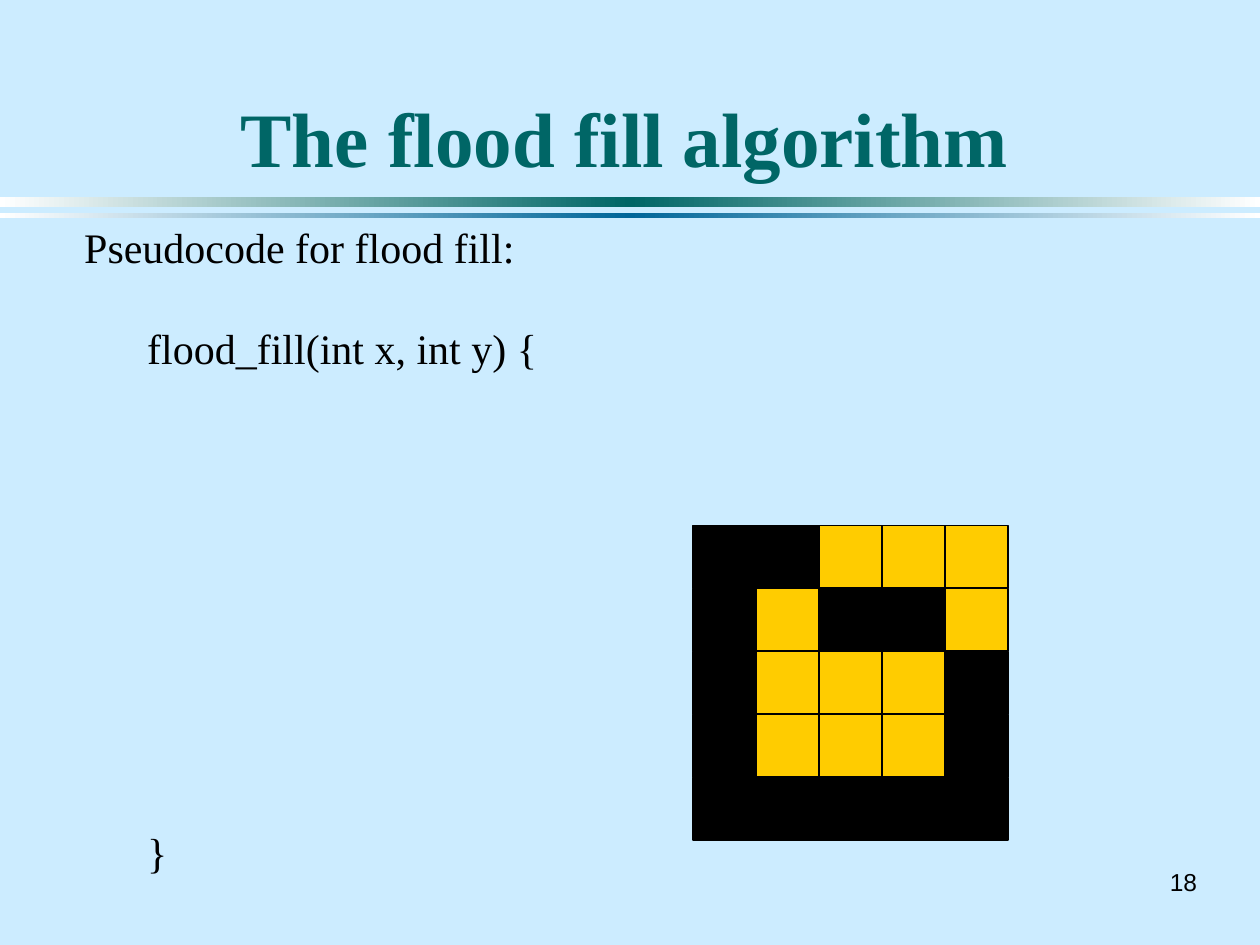
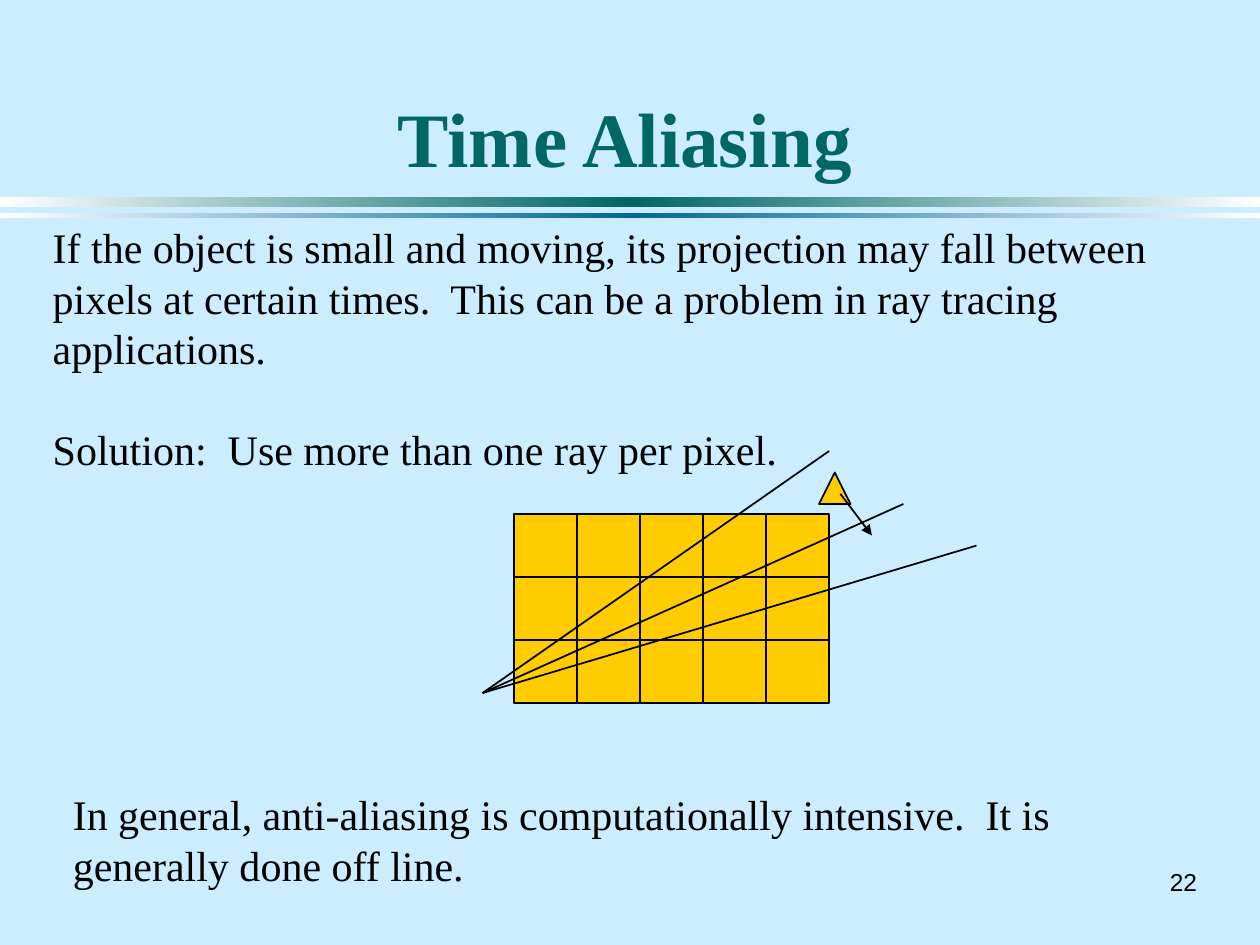
"""Build two lecture slides on flood fill and time aliasing."""
from copy import deepcopy
from dataclasses import dataclass

from lxml import etree
from pptx import Presentation
from pptx.dml.color import RGBColor
from pptx.enum.shapes import MSO_CONNECTOR, MSO_SHAPE
from pptx.enum.text import MSO_ANCHOR, PP_ALIGN
from pptx.oxml.ns import qn
from pptx.util import Inches, Pt

RECTANGLE = MSO_SHAPE.RECTANGLE
TRIANGLE = MSO_SHAPE.ISOSCELES_TRIANGLE
STRAIGHT = MSO_CONNECTOR.STRAIGHT
LEFT, CENTER, RIGHT = PP_ALIGN.LEFT, PP_ALIGN.CENTER, PP_ALIGN.RIGHT
TOP, MIDDLE, BOTTOM = MSO_ANCHOR.TOP, MSO_ANCHOR.MIDDLE, MSO_ANCHOR.BOTTOM


@dataclass(frozen=True)
class Theme:
    """Colours, fonts and type sizes shared by the slides."""
    sky: str = "CCECFF"
    teal: str = "006666"
    blue: str = "006699"
    white: str = "FFFFFF"
    black: str = "000000"
    gold: str = "FFCC00"
    serif: str = "Times New Roman"
    sans: str = "Arial"
    title_size: int = 44
    body_size: int = 24
    number_size: int = 14
    body_line: float = 28.8
    stroke: int = 1


THEME = Theme()
CELL = 0.5


def rgb(color):
    """Turn a hex string into a colour."""
    return RGBColor.from_string(color)


def inches(*lengths):
    """Turn plain numbers into lengths."""
    return [Inches(length) for length in lengths]


def add_text(page, box, paragraphs, *, font=THEME.serif, size=THEME.body_size,
             color=THEME.black, bold=False, align=LEFT, anchor=TOP,
             wrap=True, line=None):
    """Write paragraphs given as (text, indent in inches, blank lines above)."""
    frame = page.shapes.add_textbox(*inches(*box)).text_frame
    frame.word_wrap = wrap
    frame.vertical_anchor = anchor
    for index, (text, indent, lines_above) in enumerate(paragraphs):
        para = frame.add_paragraph() if index else frame.paragraphs[0]
        para.alignment = align
        if line:
            para.line_spacing = Pt(line)
            para.space_before = Pt(line * lines_above)
        if indent:
            properties = para._p.get_or_add_pPr()
            properties.set("marL", str(Inches(indent)))
            properties.set("indent", "0")
        span = para.add_run()
        span.text = text
        span.font.name = font
        span.font.size = Pt(size)
        span.font.bold = bold
        span.font.color.rgb = rgb(color)


def add_body(page, box, paragraphs, wrap=True):
    """Write body text with the shared line pitch."""
    add_text(page, box, paragraphs, wrap=wrap, line=THEME.body_line)


def add_outlined(page, kind, box, color):
    """Draw a filled shape with a thin black outline."""
    shape = page.shapes.add_shape(kind, *inches(*box))
    shape.shadow.inherit = False
    shape.fill.solid()
    shape.fill.fore_color.rgb = rgb(color)
    shape.line.color.rgb = rgb(THEME.black)
    shape.line.width = Pt(THEME.stroke)


def add_band(page, box, color):
    """Draw a band that fades from its middle colour to white ends."""
    band = page.shapes.add_shape(RECTANGLE, *inches(*box))
    band.shadow.inherit = False
    band.line.fill.background()
    band.fill.gradient()
    band.fill.gradient_angle = 0
    stop_list = band._element.spPr.find(qn("a:gradFill")).find(qn("a:gsLst"))
    stop_list.insert(1, deepcopy(stop_list[0]))
    colors = (THEME.white, color, THEME.white)
    for index, (stop, shade) in enumerate(zip(band.fill.gradient_stops, colors)):
        stop.position = index / 2
        stop.color.rgb = rgb(shade)


def add_line(page, start, end, arrow=False):
    """Draw a thin black line, with an arrowhead at its end if asked."""
    line = page.shapes.add_connector(STRAIGHT, *inches(*start, *end))
    line.line.color.rgb = rgb(THEME.black)
    line.line.width = Pt(THEME.stroke)
    if arrow:
        etree.SubElement(line.line._get_or_add_ln(), qn("a:tailEnd"),
                         type="triangle")
    etree.SubElement(line._element.spPr, qn("a:effectLst"))


def add_pixel_grid(page, left, top, rows):
    """Draw square pixels from rows in which # is black and . is gold."""
    colors = {"#": THEME.black, ".": THEME.gold}
    for row, marks in enumerate(rows):
        for column, mark in enumerate(marks):
            box = (left + column * CELL, top + row * CELL, CELL, CELL)
            add_outlined(page, RECTANGLE, box, colors[mark])


def add_moving_object(page, left, top):
    """Draw a small triangle and the arrow of its motion."""
    add_outlined(page, TRIANGLE, (left, top, 0.25, 0.25), THEME.gold)
    add_line(page, (left + 0.17, top + 0.17), (left + 0.42, top + 0.5), arrow=True)


def add_page(deck, title, number):
    """Add a slide with the shared background, bands, title and number."""
    page = deck.slides.add_slide(deck.slide_layouts[6])
    page.background.fill.solid()
    page.background.fill.fore_color.rgb = rgb(THEME.sky)
    add_band(page, (0, 1.56, 10, 0.08), THEME.teal)
    add_band(page, (0, 1.69, 10, 0.04), THEME.blue)
    add_text(page, (9.17, 6.83, 0.43, 0.33), [(number, 0, 0)], font=THEME.sans,
             size=THEME.number_size, align=RIGHT, anchor=MIDDLE, wrap=False)
    add_text(page, (0.67, 0.25, 8.58, 1.25), [(title, 0, 0)],
             size=THEME.title_size, color=THEME.teal, bold=True,
             align=CENTER, anchor=BOTTOM)
    return page


def build_flood_fill(deck):
    """Build the slide with the pseudocode and the pixel region."""
    page = add_page(deck, "The flood fill algorithm", "18")
    add_body(page, (0.57, 1.71, 3.83, 5.35), [
        ("Pseudocode for flood fill:", 0, 0),
        ("flood_fill(int x, int y) {", 0.5, 1),
        ("}", 0.5, 9),
    ], wrap=False)
    add_pixel_grid(page, 5.5, 4.17, ("##...", "#.##.", "#...#", "#...#", "#####"))


def build_time_aliasing(deck):
    """Build the slide with rays that pass a small moving object."""
    page = add_page(deck, "Time Aliasing", "22")
    add_body(page, (0.32, 1.71, 9.68, 2.1), [
        ("If the object is small and moving, its projection may fall between "
         "pixels at certain times.  This can be a problem in ray tracing "
         "applications.", 0, 0),
        ("Solution:  Use more than one ray per pixel.", 0, 1),
    ])
    add_pixel_grid(page, 4.08, 4.08, ["....."] * 3)
    eye = (3.83, 5.5)
    for ray_end in ((6.58, 3.58), (7.17, 4), (7.75, 4.33)):
        add_line(page, eye, ray_end)
    add_moving_object(page, 6.5, 3.75)
    add_body(page, (0.48, 6.21, 9.1, 0.9), [
        ("In general, anti-aliasing is computationally intensive.  It is "
         "generally done off line.", 0, 0),
    ])


def main():
    """Build and save the deck."""
    deck = Presentation()
    deck.slide_width, deck.slide_height = inches(10, 7.5)
    build_flood_fill(deck)
    build_time_aliasing(deck)
    deck.save("out.pptx")


if __name__ == "__main__":
    main()
